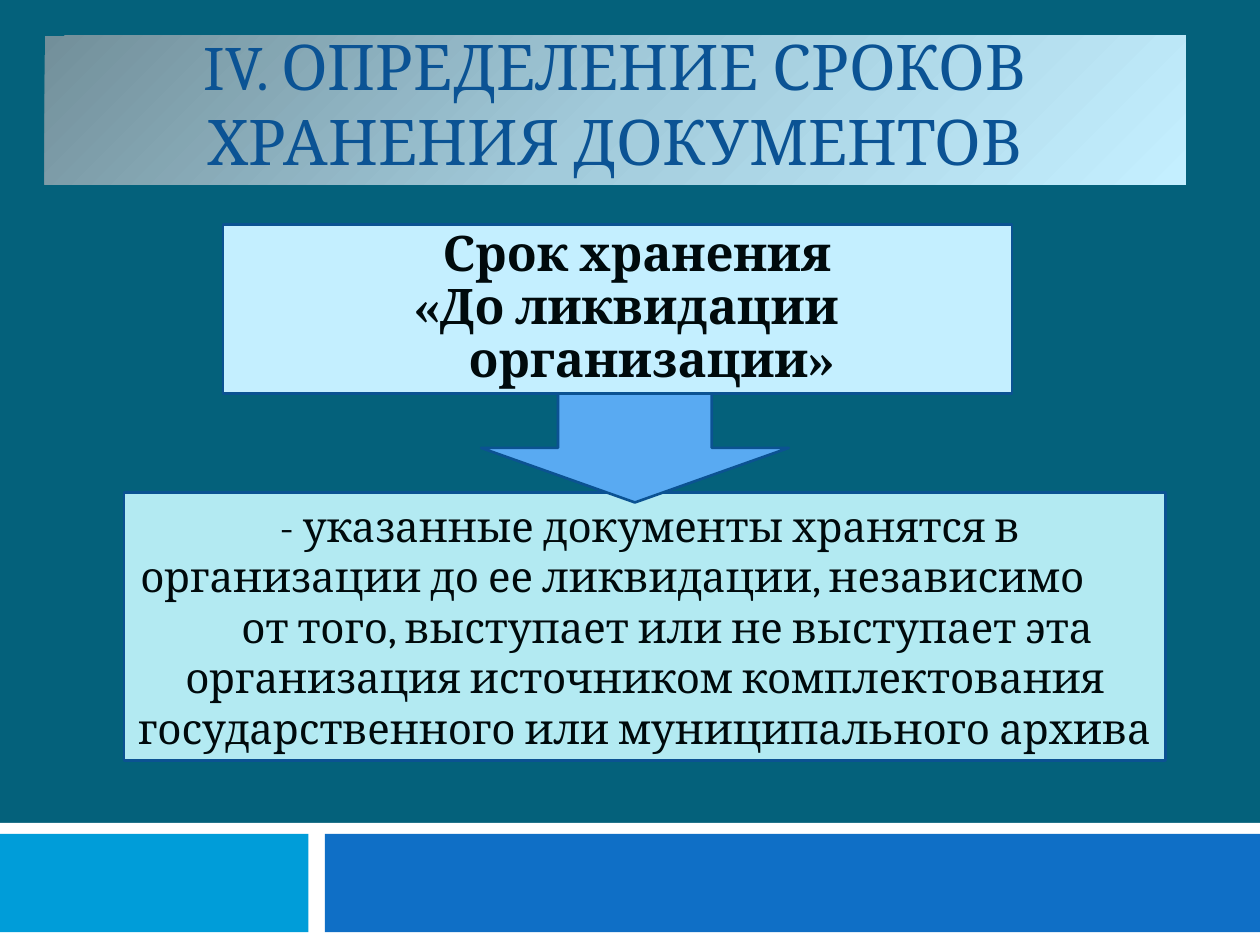
from lxml import etree
from pptx import Presentation
from pptx.dml.color import RGBColor
from pptx.enum.shapes import MSO_SHAPE as Shape
from pptx.enum.text import MSO_ANCHOR as Anchor, PP_ALIGN as Align
from pptx.oxml.ns import qn
from pptx.util import Cm, Pt

COLORS = {
    "background": "04617B",
    "band": "FFFFFF",
    "band_left": "009DD9",
    "band_right": "0F6FC6",
    "title": "0B5394",
    "outline": "0B5292",
    "text": "000A0C",
    "term": "C4EFFF",
    "arrow": "59AAF2",
    "explanation": "B3EAF2",
}
TITLE_GRADIENT = [(0, "728F9A"), (50, "A2CBDB"), (100, "C4EFFF")]
FONT = "Cambria"


def rgb(name):
    return RGBColor.from_string(COLORS[name])


def add_block(slide, box, fill, kind=Shape.RECTANGLE, outlined=False):
    """Add a flat shape; box is left, top, width, height in cm."""
    block = slide.shapes.add_shape(kind, *(Cm(length) for length in box))
    block.shadow.inherit = False
    block.fill.solid()
    block.fill.fore_color.rgb = rgb(fill)
    if outlined:
        block.line.color.rgb = rgb("outline")
        block.line.width = Pt(1.5)
    else:
        block.line.fill.background()
    return block


def write(block, text, *, size, color="text", bold=False, anchor=Anchor.MIDDLE,
          spacing=None, indents=()):
    """Fill a block with centred paragraphs; indents are (left, right, first line) in cm."""
    frame = block.text_frame
    frame.word_wrap = True
    frame.vertical_anchor = anchor
    frame.text = text
    for paragraph in frame.paragraphs:
        paragraph.alignment = Align.CENTER
        paragraph.line_spacing = spacing
        for run in paragraph.runs:
            font = run.font
            font.name, font.size, font.bold = FONT, Pt(size), bold
            font.color.rgb = rgb(color)
    for paragraph, lengths in zip(frame.paragraphs, indents):
        properties = paragraph._p.get_or_add_pPr()
        for side, length in zip(("marL", "marR", "indent"), lengths):
            properties.set(side, str(Cm(length)))


def apply_gradient(block, stops, angle):
    block.fill.gradient()
    block.fill.gradient_angle = -angle % 360
    stop_list = block._element.spPr.find(qn("a:gradFill")).find(qn("a:gsLst"))
    for old_stop in list(stop_list):
        stop_list.remove(old_stop)
    for percent, color in stops:
        stop = etree.SubElement(stop_list, qn("a:gs"), pos=str(percent * 1000))
        etree.SubElement(stop, qn("a:srgbClr"), val=color)


def add_footer_band(slide, box):
    left, top, width, height = box
    left_width, gap, inset, bottom_gap = 6.22, 0.33, 0.22, 0.26
    bar_height = height - inset - bottom_gap
    right_start = left_width + gap
    add_block(slide, box, "band")
    add_block(slide, (left, top + inset, left_width, bar_height), "band_left")
    add_block(slide, (left + right_start, top + inset, width - right_start, bar_height),
              "band_right")


def add_heading(slide, box):
    heading = add_block(slide, box, "term")
    apply_gradient(heading, TITLE_GRADIENT, 45)
    write(heading, "IV. ОПРЕДЕЛЕНИЕ СРОКОВ ХРАНЕНИЯ ДОКУМЕНТОВ",
          size=36, color="title", anchor=Anchor.BOTTOM)


def add_explanation(slide, box):
    explanation = add_block(slide, box, "explanation", outlined=True)
    write(explanation,
          "- указанные документы хранятся в организации до ее ликвидации, независимо\n"
          "от того, выступает или не выступает эта организация источником "
          "комплектования государственного или муниципального архива",
          size=24, indents=[(0, 1.3, 1.5), (0, 0, 0.9)])


def add_term(slide, box):
    term = add_block(slide, box, "term", outlined=True)
    write(term, "Срок хранения\n«До ликвидации организации»", size=28, bold=True,
          spacing=0.9, indents=[(1.37, 0, -0.59), (1.37, 0, -1.02)])


def main():
    deck = Presentation()
    deck.slide_width, deck.slide_height = Cm(25.4), Cm(19.05)
    slide = deck.slides.add_slide(deck.slide_layouts[6])
    slide.background.fill.solid()
    slide.background.fill.fore_color.rgb = rgb("background")

    add_footer_band(slide, (0, 16.59, 25.4, 2.46))
    add_heading(slide, (0.9, 0.72, 23.01, 3))
    add_explanation(slide, (2.5, 9.93, 21, 5.4))
    add_block(slide, (9.7, 7.93, 6.2, 2.2), "arrow", Shape.DOWN_ARROW, outlined=True)
    add_term(slide, (4.5, 4.53, 15.9, 3.4))
    deck.save("out.pptx")


if __name__ == "__main__":
    main()
